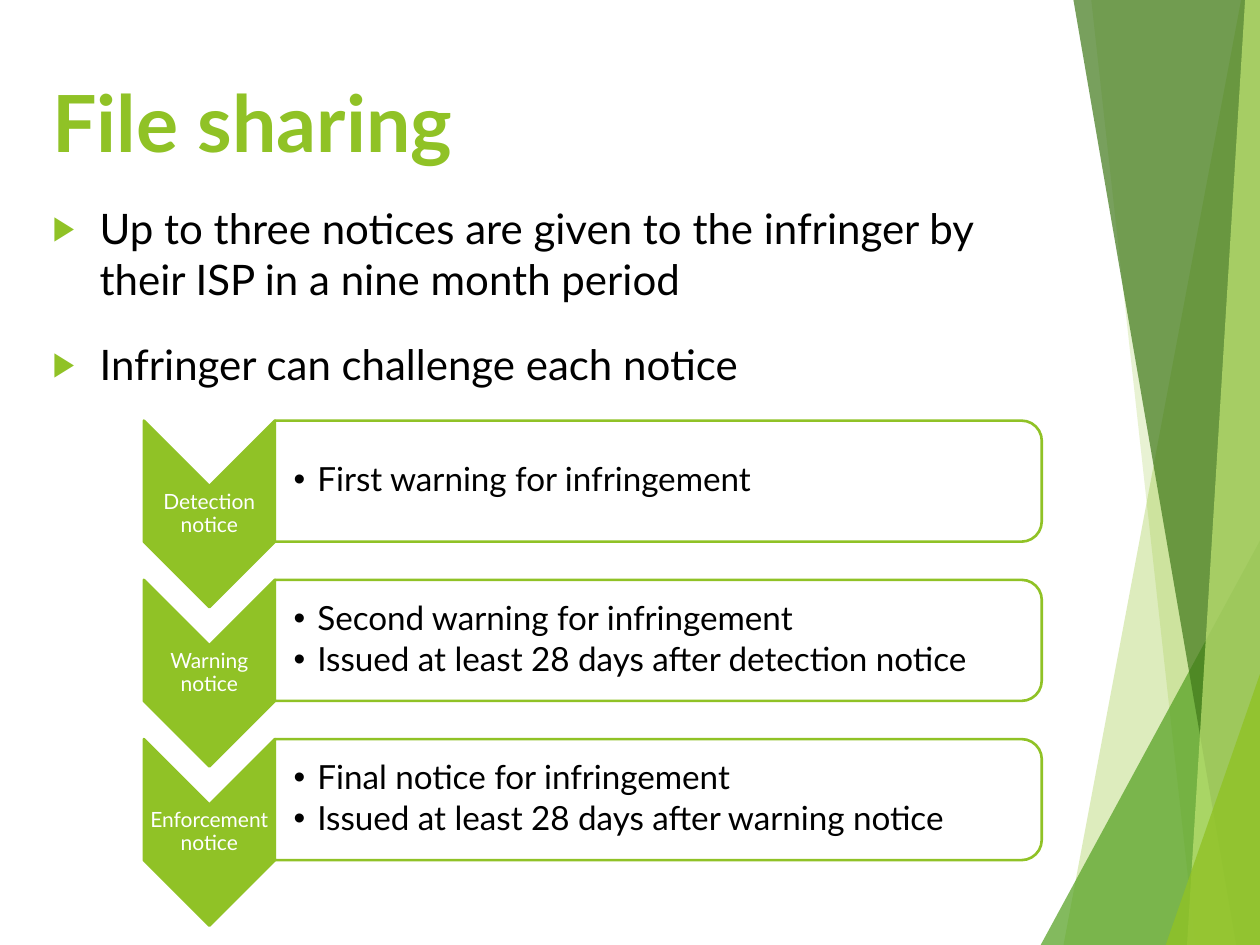
from lxml import etree
from pptx import Presentation, util as u
from pptx.dml.color import RGBColor
from pptx.enum import shapes as s, text as t
from pptx.oxml.ns import qn

WIDE, HIGH = 25.4, 19.05
GREEN = "90C226"
FONT = "Lato"

# top x, top y, bottom x, colour, opacity in percent
FACETS = [
    (25.02, 0, 21.44, GREEN, 30),
    (22, 0, 24.1, GREEN, 20),
    (WIDE, 10.9, 20.98, "54A021", 72),
    (21.64, 0, 24.92, "3F7819", 70),
    (25.1, 0, 23.93, "C0E474", 70),
    (WIDE, 13.59, 23.5, GREEN, 80),
]
POINTS = [
    "Up to three notices are given to the infringer by their ISP in a nine month period",
    "Infringer can challenge each notice",
]
STEPS = [
    ("Detection notice", ["First warning for infringement"]),
    ("Warning notice", ["Second warning for infringement",
                        "Issued at least 28 days after detection notice"]),
    ("Enforcement notice", ["Final notice for infringement",
                            "Issued at least 28 days after warning notice"]),
]


def rgb(code):
    return RGBColor.from_string(code)


def put(obj, vals):
    for name, val in vals.items():
        setattr(obj, name, val)


def paint(shape, fill, alpha=100, line=None):
    shape.shadow.inherit = False
    shape.fill.solid()
    shape.fill.fore_color.rgb = rgb(fill)
    if alpha < 100:
        clr = shape.fill._xPr.find(qn("a:solidFill"))[0]
        etree.SubElement(clr, qn("a:alpha"), val=str(alpha * 1000))
    if line:
        shape.line.color.rgb = rgb(line)
        shape.line.width = u.Pt(1.5)
    else:
        shape.line.fill.background()


def mark(para, char, hang, color, size=100):
    """Give a paragraph a bullet with a hanging indent in cm."""
    ppr = para._p.get_or_add_pPr()
    ppr.set("marL", str(u.Cm(hang)))
    ppr.set("indent", str(-u.Cm(hang)))
    clr = etree.SubElement(ppr, qn("a:buClr"))
    etree.SubElement(clr, qn("a:srgbClr"), val=color)
    etree.SubElement(ppr, qn("a:buSzPct"), val=str(size * 1000))
    etree.SubElement(ppr, qn("a:buFont"), typeface="Arial")
    etree.SubElement(ppr, qn("a:buChar"), char=char)


def write(slide, box, lines, font, color, para=None, frame=None, bullet=None):
    """Add a text box; font, para and frame are dicts of format values."""
    body = slide.shapes.add_textbox(*map(u.Cm, box)).text_frame
    put(body, {"word_wrap": True, **(frame or {})})
    for i, line in enumerate(lines):
        item = body.add_paragraph() if i else body.paragraphs[0]
        put(item, para or {})
        if bullet:
            mark(item, *bullet)
        run = item.add_run()
        run.text = line
        put(run.font, {"name": FONT, **font})
        run.font.color.rgb = rgb(color)


def turned(slide, kind, left, top, wide, high):
    """Add a shape turned by 90 degrees that fills the given box."""
    shift = (wide - high) / 2
    box = (left + shift, top - shift, high, wide)
    shape = slide.shapes.add_shape(kind, *map(u.Cm, box))
    shape.rotation = 90
    return shape


def facets(slide):
    for x, y, foot, color, alpha in FACETS:
        dots = [(foot, HIGH), (WIDE, HIGH)] + ([(WIDE, y)] if x < WIDE else [])
        form = slide.shapes.build_freeform(u.Cm(x), u.Cm(y))
        form.add_line_segments([(u.Cm(a), u.Cm(b)) for a, b in dots])
        paint(form.convert_to_shape(), color, alpha)


def heading(slide, left, top, wide):
    write(slide, (left, top, wide, 3.02), ["File sharing"],
          {"size": u.Pt(45), "bold": True}, GREEN,
          frame={"vertical_anchor": t.MSO_ANCHOR.MIDDLE})
    write(slide, (left, top + 3.02, wide, 13.31), POINTS,
          {"size": u.Pt(24)}, "000000", {"space_before": u.Pt(20)},
          bullet=("▶", 0.95, GREEN, 80))


def step(slide, left, top, wide, label, notes):
    arrow, high = 2.64, 2.44
    frame = {"vertical_anchor": t.MSO_ANCHOR.MIDDLE}
    frame.update({"margin_" + side: u.Cm(0.03)
                  for side in ("left", "top", "right", "bottom")})
    paint(turned(slide, s.MSO_SHAPE.CHEVRON, left, top, arrow, 3.76),
          GREEN, line=GREEN)
    write(slide, (left, top + 1.32, arrow, 1.12), [label],
          {"size": u.Pt(12)}, "FFFFFF",
          {"alignment": t.PP_ALIGN.CENTER, "line_spacing": 0.9,
           "space_after": u.Pt(4)}, frame)

    wide -= arrow
    paint(turned(slide, s.MSO_SHAPE.ROUND_2_SAME_RECTANGLE,
                 left + arrow, top, wide, high), "FFFFFF", 90, GREEN)
    write(slide, (left + arrow, top + 0.12, wide - 0.12, high - 0.24), notes,
          {"size": u.Pt(19)}, "000000",
          {"line_spacing": 0.9, "space_after": u.Pt(3)},
          {**frame, "margin_left": u.Cm(0.38)}, ("•", 0.48, "000000"))


def main():
    deck = Presentation()
    put(deck, {"slide_width": u.Cm(WIDE), "slide_height": u.Cm(HIGH)})
    slide = deck.slides.add_slide(deck.slide_layouts[6])
    facets(slide)
    heading(slide, 0.81, 0.94, 20.17)
    for i, (label, notes) in enumerate(STEPS):
        step(slide, 2.9, 8.48 + 3.21 * i, 18.1, label, notes)
    deck.save("out.pptx")


if __name__ == "__main__":
    main()
